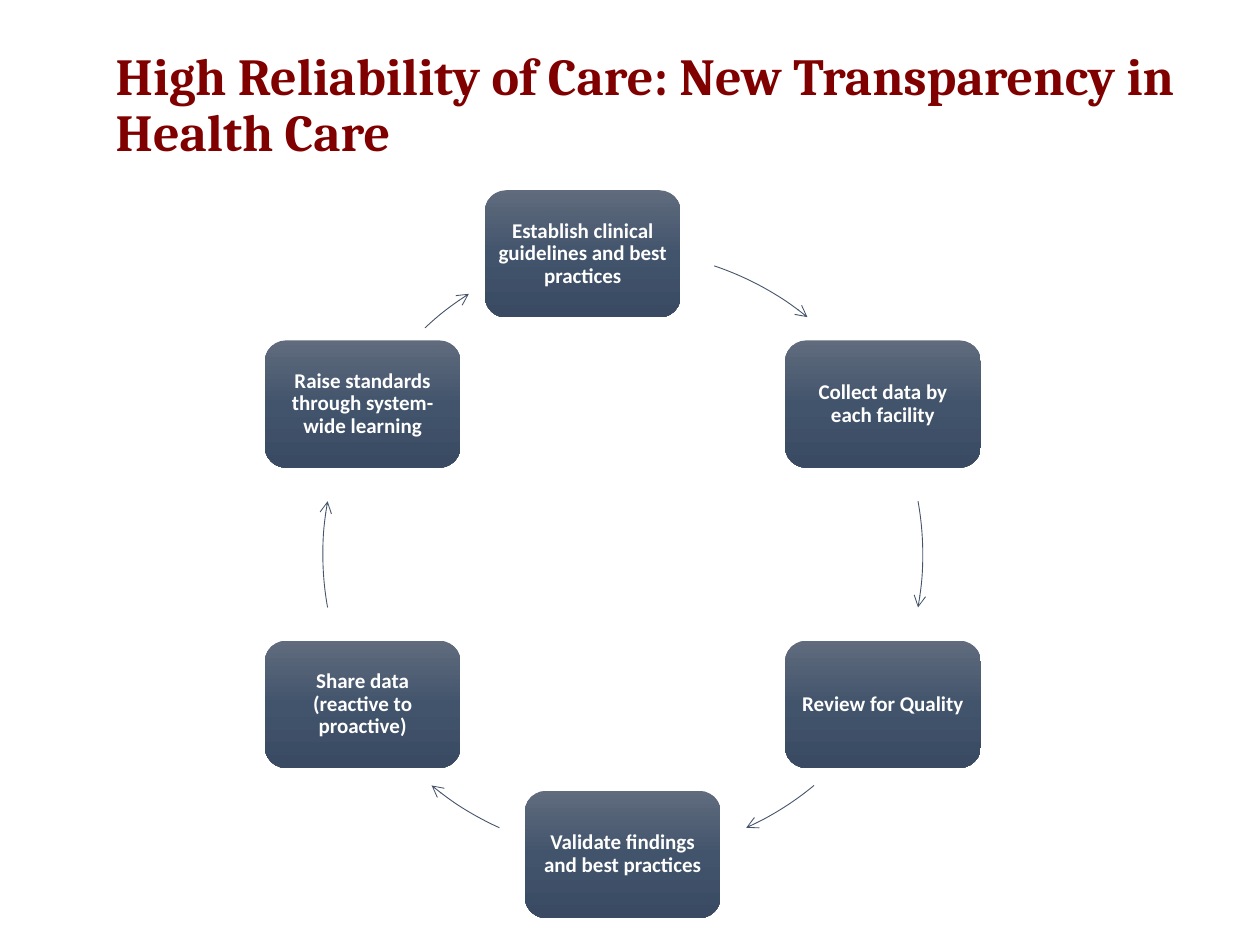
from copy import deepcopy
from math import cos, radians, sin

from lxml.etree import SubElement
from pptx import Presentation
from pptx.dml.color import RGBColor
from pptx.enum.shapes import MSO_SHAPE
from pptx.enum.text import MSO_ANCHOR, PP_ALIGN
from pptx.oxml.ns import qn
from pptx.util import Pt

MAROON = RGBColor(0x80, 0x00, 0x00)
WHITE = RGBColor(0xFF, 0xFF, 0xFF)
SLATE = RGBColor(0x44, 0x54, 0x6A)
GRADIENT = [
    (0, RGBColor(0x60, 0x6B, 0x7D)),
    (0.5, RGBColor(0x42, 0x54, 0x6C)),
    (1, RGBColor(0x39, 0x4A, 0x62)),
]

TITLE_FONT = {"name": "Cambria", "size": Pt(29.7), "bold": True}
BOX_FONT = {"name": "Calibri", "size": Pt(12), "bold": True}
BOX_FRAME = {
    "word_wrap": True,
    "vertical_anchor": MSO_ANCHOR.MIDDLE,
    "margin_left": Pt(3.6),
    "margin_right": Pt(3.6),
    "margin_top": Pt(3.6),
    "margin_bottom": Pt(3.6),
}

BOX_W, BOX_H = 111.9, 72.7
TOP, ROW_STEP = 108.7, 85.8
LEFT_COL, RIGHT_COL = 151.3, 448.6
RADIUS = 171.4

STEPS = [
    ("Establish clinical guidelines and best practices", 277.1, 0),
    ("Collect data by each facility", RIGHT_COL, 1),
    ("Review for Quality", RIGHT_COL, 3),
    ("Validate findings and best practices", 299.9, 4),
    ("Share data (reactive to proactive)", LEFT_COL, 3),
    ("Raise standards through system-wide learning", LEFT_COL, 1),
]
CENTER = (355.9, 316.8)
ARCS = [
    ((353.5, 314.4), -71.4, -51),
    (CENTER, -10.2, 10.2),
    (CENTER, 50.4, 65.7),
    (CENTER, 114.3, 129.6),
    (CENTER, 169.8, 190.2),
    ((360, 312.5), 226.9, 237.5),
]


def add_text(tf, text, font, color):
    p = tf.paragraphs[0]
    p.line_spacing = 0.9
    r = p.add_run()
    r.text = text
    for name, value in font.items():
        setattr(r.font, name, value)
    r.font.color.rgb = color
    return p


prs = Presentation()
prs.slide_width, prs.slide_height = Pt(720), Pt(540)
s = prs.slides.add_slide(prs.slide_layouts[6])

title = s.shapes.add_textbox(Pt(59), Pt(29.8), Pt(620.6), Pt(62))
title.text_frame.word_wrap = True
title.text_frame.vertical_anchor = MSO_ANCHOR.MIDDLE
add_text(title.text_frame, "High Reliability of Care: New Transparency in Health Care",
         TITLE_FONT, MAROON)

for (text, left, row), ((cx, cy), start, end) in zip(STEPS, ARCS):
    sp = s.shapes.add_shape(MSO_SHAPE.ROUNDED_RECTANGLE, Pt(left),
                            Pt(TOP + row * ROW_STEP), Pt(BOX_W), Pt(BOX_H))
    sp.shadow.inherit = False
    sp.line.fill.background()
    sp.fill.gradient()
    sp.fill.gradient_angle = 270
    stops = sp._element.spPr.find(".//" + qn("a:gsLst"))
    stops.insert(1, deepcopy(stops[0]))
    for stop, (position, color) in zip(sp.fill.gradient_stops, GRADIENT):
        stop.position = position
        stop.color.rgb = color
    tf = sp.text_frame
    for name, value in BOX_FRAME.items():
        setattr(tf, name, value)
    p = add_text(tf, text, BOX_FONT, WHITE)
    p.alignment = PP_ALIGN.CENTER

    ends = [(Pt(RADIUS * (1 + cos(radians(a)))), Pt(RADIUS * (1 + sin(radians(a)))))
            for a in (start, end)]
    builder = s.shapes.build_freeform(*ends[0])
    builder.add_line_segments(ends[1:], close=False)
    arc = builder.convert_to_shape()
    arc.left, arc.top = Pt(cx - RADIUS), Pt(cy - RADIUS)
    arc.width = arc.height = Pt(2 * RADIUS)
    curve = arc._element.spPr.find(".//" + qn("a:path"))
    for side in "wh":
        curve.set(side, str(Pt(2 * RADIUS)))
    point = curve.find(".//" + qn("a:pt"))
    for axis, value in zip("xy", ends[0]):
        point.set(axis, str(int(value)))
    curve.remove(curve.find(qn("a:lnTo")))
    SubElement(curve, qn("a:arcTo"), wR=str(Pt(RADIUS)), hR=str(Pt(RADIUS)),
               stAng=str(round(start % 360 * 60000)),
               swAng=str(round((end - start) * 60000)))
    arc.shadow.inherit = False
    arc.fill.background()
    arc.line.color.rgb = SLATE
    arc.line.width = Pt(0.5)
    SubElement(arc.line._get_or_add_ln(), qn("a:tailEnd"), type="arrow")

prs.save("out.pptx")
